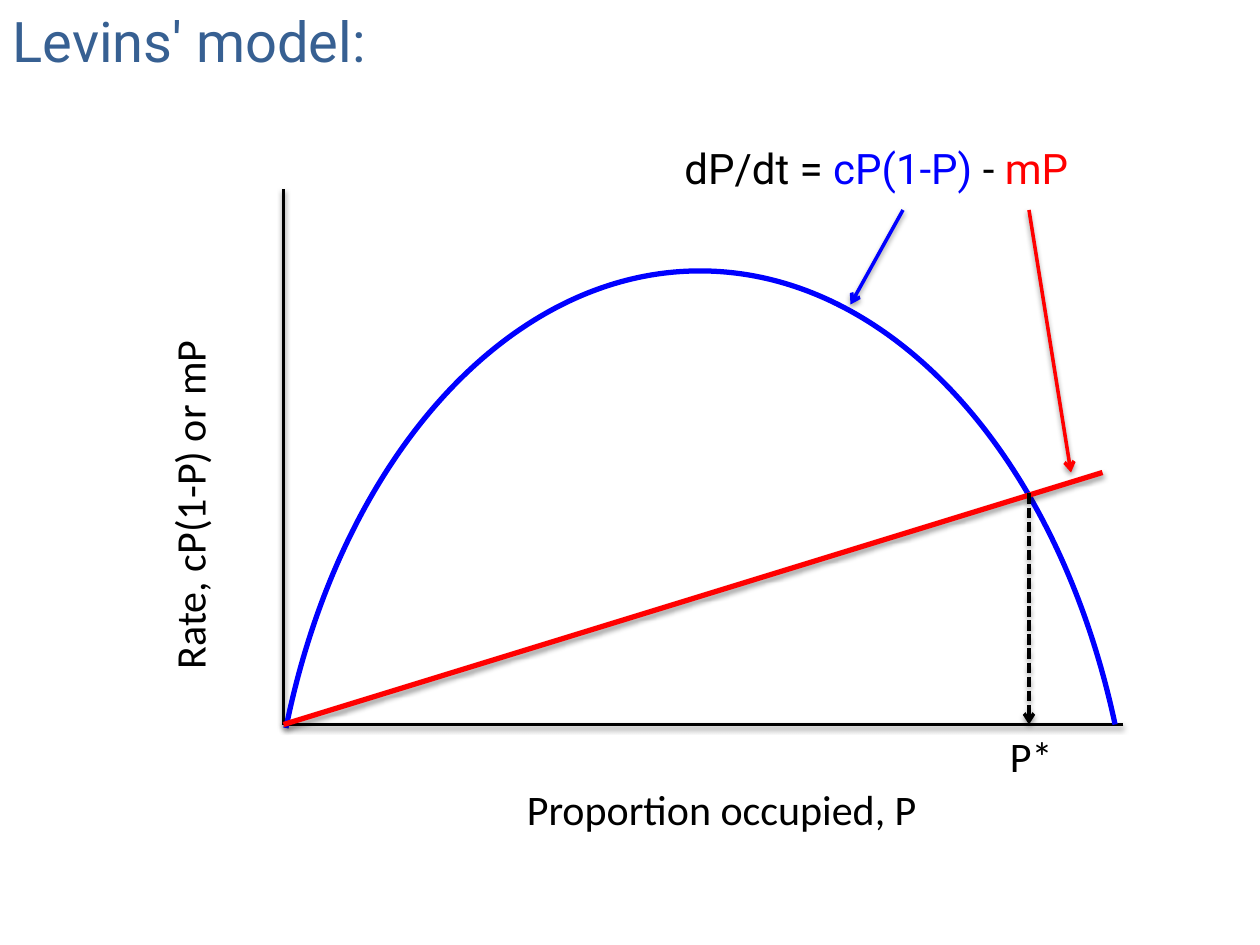
from dataclasses import dataclass

from lxml import etree
from pptx import Presentation
from pptx.dml.color import RGBColor
from pptx.enum import dml, shapes, text
from pptx.oxml import parse_xml
from pptx.oxml.ns import nsdecls, qn
from pptx.util import Pt


@dataclass(frozen=True)
class Theme:
    """Colours, fonts and sizes of the slide."""
    ink: str = "000000"
    gain: str = "0000FF"
    loss: str = "FF0000"
    head: str = "376092"
    sans: str = "Calibri"
    show: str = "Roboto"
    big: int = 32
    mid: int = 24
    thin: int = 2
    bold: int = 3


THEME = Theme()
LEFT, BASE, STAR = 162, 414, 588


def style(run, face, size, hue):
    """Set the font of one run."""
    run.font.name = face
    run.font.size = Pt(size)
    run.font.color.rgb = RGBColor.from_string(hue)


def add_title(slide, words):
    """Fill and place the title."""
    title = slide.shapes.title
    title.left, title.top, title.width, title.height = Pt(0), Pt(0), Pt(661), Pt(46)
    frame = title.text_frame
    frame.text = words
    frame.auto_size = text.MSO_AUTO_SIZE.NONE
    frame.vertical_anchor = text.MSO_ANCHOR.TOP
    line = frame.paragraphs[0]
    line.alignment = text.PP_ALIGN.LEFT
    style(line.runs[0], THEME.show, THEME.big, THEME.head)


def add_label(slide, box, parts, face=THEME.sans, turn=0, wrap=True):
    """Add a text box made of (words, colour) parts."""
    label = slide.shapes.add_textbox(*map(Pt, box))
    label.rotation = turn
    frame = label.text_frame
    frame.word_wrap = wrap
    for words, hue in parts:
        run = frame.paragraphs[0].add_run()
        run.text = words
        style(run, face, THEME.mid, hue)


def add_line(slide, start, end, hue, width=THEME.thin, arrow=False, dash=False):
    """Add a straight line with a soft shadow."""
    line = slide.shapes.add_connector(
        shapes.MSO_CONNECTOR.STRAIGHT, *map(Pt, (*start, *end)))
    line.line.color.rgb = RGBColor.from_string(hue)
    line.line.width = Pt(width)
    if dash:
        line.line.dash_style = dml.MSO_LINE.SQUARE_DOT
    if arrow:
        etree.SubElement(line.line._get_or_add_ln(), qn("a:tailEnd"), type="arrow")
    line._element.spPr.append(parse_xml(
        f'<a:effectLst {nsdecls("a")}><a:outerShdw blurRad="{Pt(3.1)}" '
        f'dist="{Pt(1.6)}" dir="5400000" rotWithShape="0"><a:srgbClr val="{THEME.ink}">'
        '<a:alpha val="38000"/></a:srgbClr></a:outerShdw></a:effectLst>'))


def add_curve(slide, start, points, hue):
    """Add an open curve whose points come in Bezier triples."""
    pen = slide.shapes.build_freeform(*map(Pt, start))
    pen.add_line_segments([(Pt(x), Pt(y)) for x, y in points], close=False)
    curve = pen.convert_to_shape()
    curve.shadow.inherit = False
    curve.fill.background()
    curve.line.color.rgb = RGBColor.from_string(hue)
    curve.line.width = Pt(THEME.bold)
    steps = curve._element.xpath(".//a:lnTo")
    for i in range(0, len(steps), 3):
        bend = etree.Element(qn("a:cubicBezTo"))
        steps[i].addprevious(bend)
        for step in steps[i:i + 3]:
            bend.append(step[0])
            step.getparent().remove(step)


def main():
    """Build the slide and save it."""
    deck = Presentation()
    deck.slide_width, deck.slide_height = Pt(720), Pt(540)
    slide = deck.slides.add_slide(deck.slide_layouts[5])
    ink, gain, loss = THEME.ink, THEME.gain, THEME.loss
    add_title(slide, "Levins' model:")
    add_label(slide, (294, 444, 288, 36), [("Proportion occupied, P", ink)])
    add_line(slide, (LEFT, 108), (LEFT, BASE), ink)
    add_line(slide, (642, BASE), (LEFT, BASE), ink)
    add_label(slide, (-36, 227.5, 288, 36), [("Rate, cP(1-P) or mP", ink)], turn=270)
    add_curve(slide, (637.2, BASE), [
        (604, 259), (508, 154.8), (400, 154.8),
        (291.6, 154.8), (195, 260.6), (163.4, 416)], gain)
    add_line(slide, (LEFT, BASE), (630, 270), loss, THEME.bold)
    add_label(slide, (384, 78, 239, 36), [
        ("dP/dt = ", ink), ("cP(1-P)", gain), (" - ", ink), ("mP", loss)],
        THEME.show, wrap=False)
    add_line(slide, (516, 120), (486, 174), gain, arrow=True)
    add_line(slide, (STAR, 120), (612, 270), loss, arrow=True)
    add_line(slide, (STAR, 282), (STAR, BASE), ink, arrow=True, dash=True)
    add_label(slide, (570, BASE, 48, 36), [("P*", ink)])
    deck.save("out.pptx")


if __name__ == "__main__":
    main()
